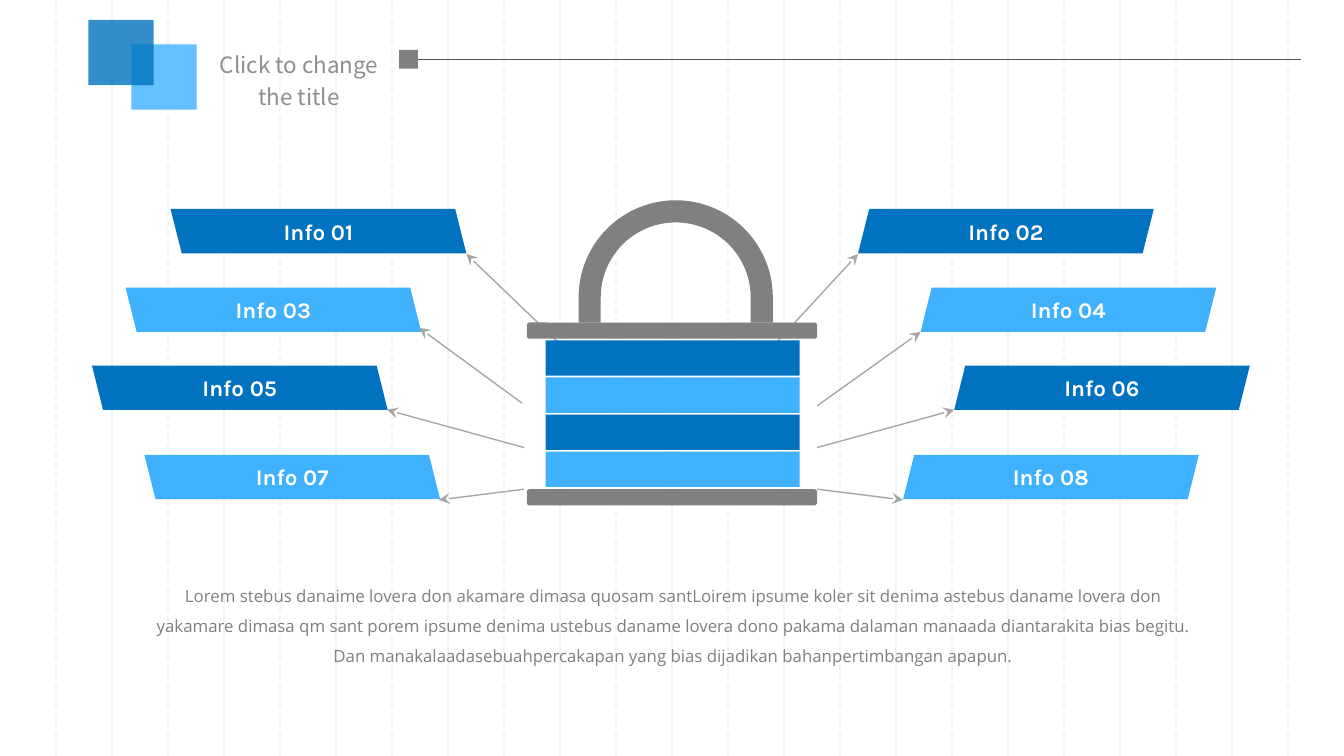
from lxml import etree
from pptx import Presentation
from pptx import util as u
from pptx.dml.color import RGBColor
from pptx.enum import dml, shapes, text
from pptx.oxml.ns import qn

BLUE = RGBColor(0x00, 0x72, 0xBF)
SKY = RGBColor(0x3F, 0xB1, 0xFF)
STEEL = RGBColor(0x80, 0x80, 0x80)
GUIDE = RGBColor(0xF3, 0xF3, 0xF3)
ARROW = RGBColor(0xA6, 0xA6, 0xA6)
RULE = RGBColor(0x55, 0x55, 0x55)
TITLE = RGBColor(0x8E, 0x8E, 0x8E)
BODY = RGBColor(0x7F, 0x7F, 0x7F)
WHITE = RGBColor(0xFF, 0xFF, 0xFF)
SHAPE = shapes.MSO_SHAPE

# A 16:9 slide
prs = Presentation()
prs.slide_width = u.Inches(10)
prs.slide_height = prs.slide_width * 9 // 16
slide = prs.slides.add_slide(prs.slide_layouts[6])

# Grid: 100 columns by 56.25 rows
COL = prs.slide_width / 100
ROW = prs.slide_height / 56.25


def add_block(kind, left, top, width, height, color):
    block = slide.shapes.add_shape(kind, int(left * COL), int(top * ROW),
                                   int(width * COL), int(height * ROW))
    block.shadow.inherit = False
    block.fill.solid()
    block.fill.fore_color.rgb = color
    block.line.fill.background()
    return block


def add_line(x1, y1, x2, y2, color):
    line = slide.shapes.add_connector(shapes.MSO_CONNECTOR.STRAIGHT, int(x1 * COL),
                                      int(y1 * ROW), int(x2 * COL), int(y2 * ROW))
    line.line.color.rgb = color
    line.line.width = u.Pt(0.75)
    etree.SubElement(line._element.spPr, qn("a:effectLst"))
    return line


# Background guides: dashed and solid in turn
for step in range(1, 24):
    guide = add_line(step * 100 / 24, 0, step * 100 / 24, 56.5, GUIDE)
    if step % 2:
        guide.line.dash_style = dml.MSO_LINE.DASH

# Info tags, with an arrow from the padlock to each tag's inner lower corner
TAG_W, TAG_H = 22, 3.3
tags = [  # left, top, arrow start x and y, arrow tip x and y
    (12.7, 15.55, 42.2, 26.1, 34.7, 18.9), (63.85, 15.55, 57.2, 26.1, 63.85, 18.9),
    (9.35, 21.4, 38.85, 30, 31.2, 24.4), (68.5, 21.4, 60.8, 30.2, 68.5, 24.7),
    (6.85, 27.2, 39, 33.3, 28.8, 30.5), (71, 27.2, 60.8, 33.3, 71, 30.5),
    (10.75, 33.85, 39, 36.4, 32.65, 37.2), (67.2, 33.85, 60.8, 36.4, 67.2, 37.2),
]
for index, (left, top, start_x, start_y, tip_x, tip_y) in enumerate(tags):
    tag = add_block(SHAPE.PARALLELOGRAM, left, top, TAG_W, TAG_H,
                    (BLUE, SKY)[index // 2 % 2])
    if index % 2 == 0:
        tag._element.spPr.xfrm.set("flipH", "1")
    label = tag.text_frame
    label.text = f"Info {index + 1:02}"
    label.vertical_anchor = text.MSO_ANCHOR.MIDDLE
    label.margin_left = label.margin_right = u.Inches(0.07)
    label.margin_top = label.margin_bottom = u.Inches(0.04)
    label.paragraphs[0].alignment = text.PP_ALIGN.CENTER
    font = label.paragraphs[0].runs[0].font
    font.name, font.size, font.bold = "Karla", u.Pt(12), True
    font.color.rgb = WHITE

    arrow = add_line(start_x, start_y, tip_x, tip_y, ARROW)
    etree.SubElement(arrow.line._get_or_add_ln(), qn("a:tailEnd"), type="stealth")

# Padlock: shackle, two plates, four bars
shackle = add_block(SHAPE.U_TURN_ARROW, 43.05, 14.9, 15.9, 9.1, STEEL)
for position, share in enumerate((0.181, 0.25, 0, 0.795, 1)):
    shackle.adjustments[position] = share
for top in (24, 36.4):
    add_block(SHAPE.ROUNDED_RECTANGLE, 39.2, top, 21.6, 1.2, STEEL)
for bar in range(4):
    add_block(SHAPE.RECTANGLE, 40.6, 25.33 + bar * 2.76, 18.9, 2.63, (BLUE, SKY)[bar % 2])

# Header rule with its square
marker = add_block(SHAPE.RECTANGLE, 29.7, 3.72, 1.4, 1.4, STEEL)
header_rule = add_line(96.8, 4.42, 31.1, 4.42, RULE)
header_rule.end_connect(marker, 3)

# Description and title
texts = [  # left, top, width, height, side inset, top inset, spacing, size, font, colour, words
    (10.6, 42.4, 78.9, 7.6, 0.07, 0.04, 1.5, 9, "Open Sans", BODY,
     "Lorem stebus danaime lovera don akamare dimasa quosam santLoirem ipsume koler sit "
     "denima astebus daname lovera don yakamare dimasa qm sant porem ipsume denima ustebus "
     "daname lovera dono pakama dalaman manaada diantarakita bias begitu.\n"
     "Dan manakalaadasebuahpercakapan yang bias dijadikan bahanpertimbangan apapun."),
    (15.75, 3.4, 13, 2.7, 0, 0, 1.2, 12, "Noto Sans CJK SC", TITLE,
     "Click to change the title"),
]
for left, top, width, height, side, edge, spacing, size, face, color, words in texts:
    frame = slide.shapes.add_textbox(int(left * COL), int(top * ROW),
                                     int(width * COL), int(height * ROW)).text_frame
    frame.word_wrap = True
    frame.margin_left = frame.margin_right = u.Inches(side)
    frame.margin_top = frame.margin_bottom = u.Inches(edge)
    frame.text = words
    for paragraph in frame.paragraphs:
        paragraph.alignment = text.PP_ALIGN.CENTER
        paragraph.line_spacing = spacing
        font = paragraph.runs[0].font
        font.name, font.size = face, u.Pt(size)
        font.color.rgb = color

# Overlapping translucent squares
for left, top, color in ((9.77, 3.3, SKY), (6.57, 1.48, BLUE)):
    square = add_block(SHAPE.RECTANGLE, left, top, 4.86, 4.86, color)
    tint = square._element.spPr.find(qn("a:solidFill"))[0]
    etree.SubElement(tint, qn("a:alpha"), val="80000")

prs.save("out.pptx")
